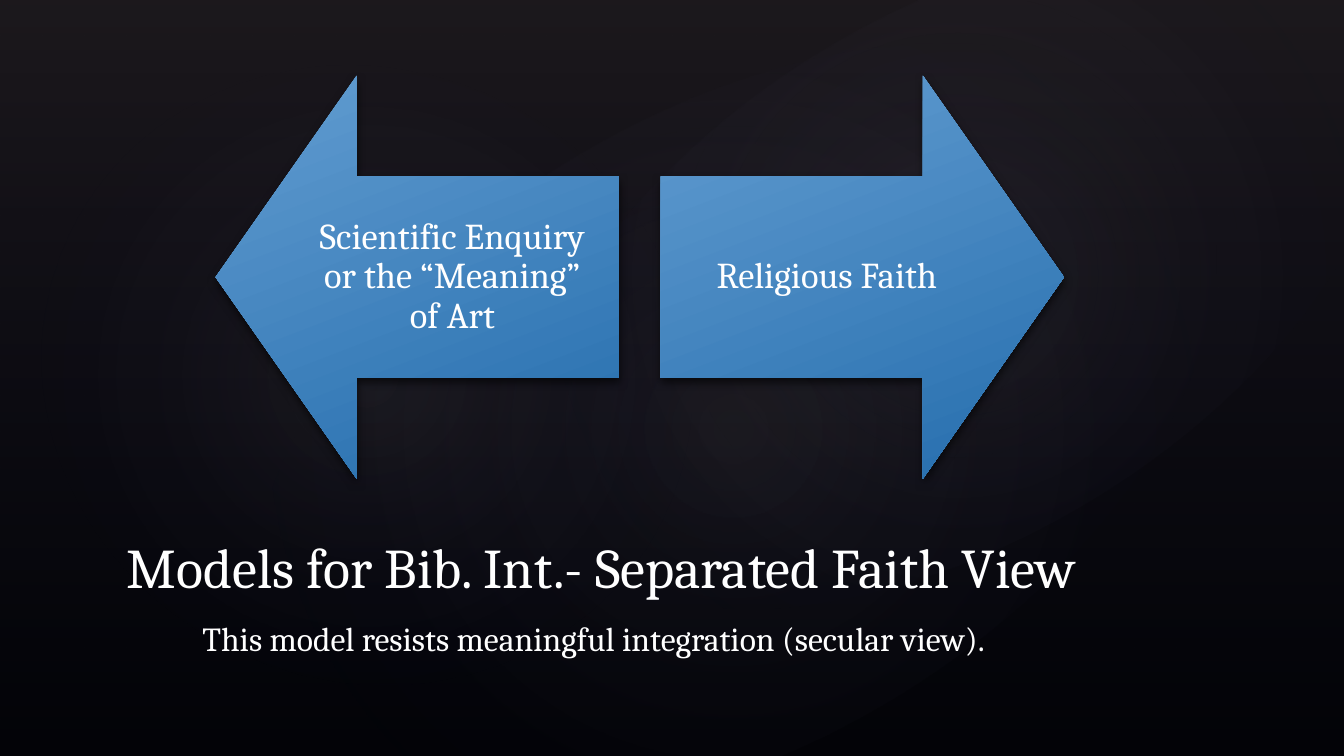
import pptx
import pptx.dml.color
import pptx.enum.shapes
import pptx.enum.text
import pptx.oxml
import pptx.oxml.ns
import pptx.util

Pt = pptx.util.Pt
SHAPES = pptx.enum.shapes.MSO_SHAPE
ANCHOR = pptx.enum.text.MSO_ANCHOR
ALIGN = pptx.enum.text.PP_ALIGN
NAMESPACE = pptx.oxml.ns.nsdecls("a")

SLIDE_BOX = (0, 0, 960, 540)
LINEAR = '<a:lin ang="{}" scaled="0"/>'
RADIAL = ('<a:path path="circle"><a:fillToRect l="50000" t="50000" '
          'r="50000" b="50000"/></a:path>')
# Box, rotation and centre opacity in percent
GLOWS = [
    ((144, 82, 760, 449), 328.7, 7),
    ((44, 33, 436, 470), 294.3, 8),
    ((344, 9.5, 680, 374), 328.7, 8),
]


def color(hex_string):
    return pptx.dml.color.RGBColor.from_string(hex_string)


def set_attributes(target, values):
    for name, value in values.items():
        setattr(target, name, value)


def set_gradient(shape, stops, direction):
    """Fill with stops of (position, colour, opacity), all in percent."""
    stop_xml = "".join(
        f'<a:gs pos="{position * 1000}"><a:srgbClr val="{hex_string}">'
        f'<a:alpha val="{opacity * 1000}"/></a:srgbClr></a:gs>'
        for position, hex_string, opacity in stops)
    gradient = pptx.oxml.parse_xml(
        f'<a:gradFill {NAMESPACE} rotWithShape="1">'
        f'<a:gsLst>{stop_xml}</a:gsLst>{direction}</a:gradFill>')
    shape.fill.background()
    properties = shape.element.spPr
    properties.replace(properties.find(pptx.oxml.ns.qn("a:noFill")), gradient)


def add_plain_shape(slide, kind, box):
    shape = slide.shapes.add_shape(kind, *map(Pt, box))
    shape.line.fill.background()
    shape.shadow.inherit = False
    return shape


def write_text(shape, text, size, alignment, anchor, inset=None):
    frame = shape.text_frame
    set_attributes(frame, {"word_wrap": True, "vertical_anchor": anchor})
    if inset is not None:
        sides = ("left", "top", "right", "bottom")
        set_attributes(frame, {f"margin_{side}": Pt(inset) for side in sides})
    paragraph = frame.paragraphs[0]
    paragraph.alignment = alignment
    run = paragraph.add_run()
    run.text = text
    set_attributes(run.font, {"name": "Cambria", "size": Pt(size)})
    run.font.color.rgb = color("FFFFFF")
    return paragraph


def add_background(slide, box):
    slide.background.fill.solid()
    slide.background.fill.fore_color.rgb = color("000000")
    veil = add_plain_shape(slide, SHAPES.RECTANGLE, box)
    set_gradient(veil, [(0, "504652", 36), (100, "242852", 10)],
                 LINEAR.format(90 * 60000))
    left, top = box[:2]
    for (x, y, width, height), rotation, opacity in GLOWS:
        glow = add_plain_shape(slide, SHAPES.OVAL, (left + x, top + y, width, height))
        glow.rotation = rotation
        set_gradient(glow, [(0, "C4BCC6", opacity), (58, "242852", 0)], RADIAL)


def add_shadow(shape):
    effects = shape.element.spPr.find(pptx.oxml.ns.qn("a:effectLst"))
    effects.append(pptx.oxml.parse_xml(
        f'<a:outerShdw {NAMESPACE} blurRad="{Pt(6)}" dist="{Pt(3)}" '
        'dir="5400000" rotWithShape="0"><a:srgbClr val="000000">'
        '<a:alpha val="60000"/></a:srgbClr></a:outerShdw>'))


def add_arrow_pair(slide, box):
    """Place two square arrows pointing apart at the ends of the box."""
    left, top, width, size = box
    arrows = [
        (SHAPES.LEFT_ARROW, left, "Scientific Enquiry or the “Meaning” of Art"),
        (SHAPES.RIGHT_ARROW, left + width - size, "Religious Faith"),
    ]
    for kind, x, text in arrows:
        arrow = add_plain_shape(slide, kind, (x, top, size, size))
        arrow.adjustments[0] = 0.5
        arrow.adjustments[1] = 0.35
        set_gradient(arrow, [(0, "629DD1", 100), (100, "256DAD", 100)],
                     LINEAR.format(69 * 60000))
        add_shadow(arrow)
        paragraph = write_text(arrow, text, 26, ALIGN.CENTER, ANCHOR.MIDDLE, 14.4)
        paragraph.line_spacing = 0.9


def add_captions(slide, box):
    left, top, width, _ = box
    captions = [
        ("Models for Bib. Int.- Separated Faith View", 40,
         (left, top, width, 72), ANCHOR.BOTTOM),
        ("This model resists meaningful integration (secular view).", 24,
         (left + 54, top + 78, 634, 36), ANCHOR.TOP),
    ]
    for text, size, caption_box, anchor in captions:
        caption = slide.shapes.add_textbox(*map(Pt, caption_box))
        write_text(caption, text, size, ALIGN.LEFT, anchor)


def main():
    presentation = pptx.Presentation()
    set_attributes(presentation, {"slide_width": Pt(SLIDE_BOX[2]),
                                  "slide_height": Pt(SLIDE_BOX[3])})
    slide = presentation.slides.add_slide(presentation.slide_layouts[6])
    add_background(slide, SLIDE_BOX)
    add_arrow_pair(slide, (154, 54, 606, 288))
    add_captions(slide, (83.5, 360, 792, 114))
    presentation.save("out.pptx")


if __name__ == "__main__":
    main()
